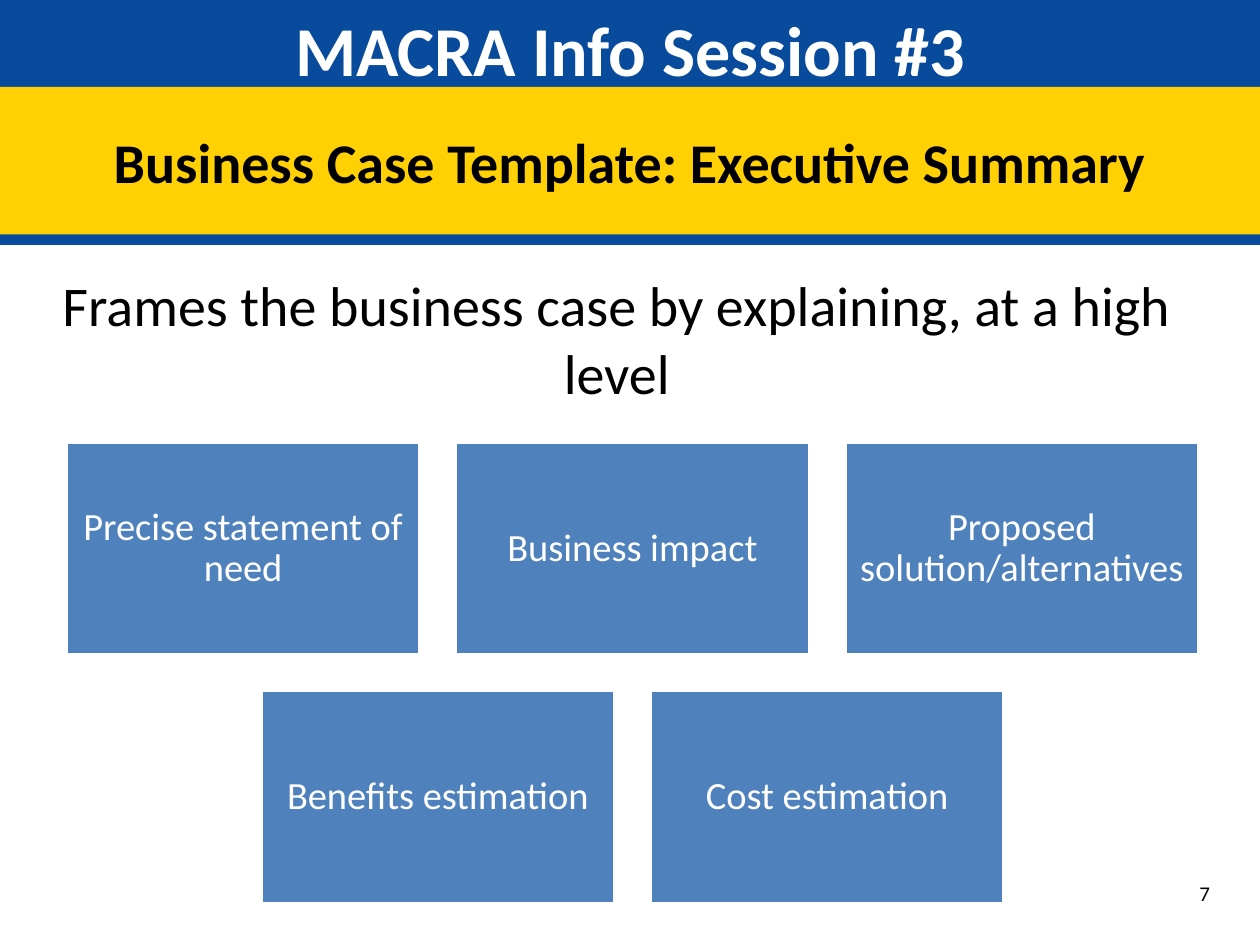
"""Build the executive summary slide with two banner bands and a centred grid of boxes."""
import pptx
import pptx.util
import pptx.dml.color
import pptx.enum.shapes
import pptx.enum.text
import pptx.oxml.ns
import lxml.etree

TITLE = "MACRA Info Session #3"
SUBTITLE = "Business Case Template: Executive Summary"
LEAD = "Frames the business case by explaining, at a high level"
ROWS = [
    ["Precise statement of need", "Business impact", "Proposed solution/alternatives"],
    ["Benefits estimation", "Cost estimation"],
]
PAGE = "7"

COLORS = {"blue": "084A9C", "yellow": "FFD004", "box": "4F81BD", "white": "FFFFFF", "black": "000000"}
WIDTH, HEIGHT = 10, 7.5
BOX_W, BOX_H, GAP = 2.81, 1.69, 0.28
GRID_CENTER, GRID_TOP = 5.02, 3.51

ANCHOR = pptx.enum.text.MSO_ANCHOR
CENTER = pptx.enum.text.PP_ALIGN.CENTER
RECT = pptx.enum.shapes.MSO_SHAPE.RECTANGLE


def rgb(name):
    return pptx.dml.color.RGBColor.from_string(COLORS[name])


def place(sp, box):
    for key, value in zip(("left", "top", "width", "height"), box):
        setattr(sp, key, pptx.util.Inches(value))


def write(sp, text, size, color, bold=False, anchor=ANCHOR.MIDDLE, align=CENTER, spacing=None):
    tf = sp.text_frame
    frame = {"word_wrap": True, "auto_size": pptx.enum.text.MSO_AUTO_SIZE.NONE, "vertical_anchor": anchor}
    for key, value in frame.items():
        setattr(tf, key, value)
    p = tf.paragraphs[0]
    p.alignment = align
    p.line_spacing = spacing
    r = p.add_run()
    r.text = text
    for key, value in {"name": "Calibri", "size": pptx.util.Pt(size), "bold": bold}.items():
        setattr(r.font, key, value)
    r.font.color.rgb = rgb(color)


def paint(sp, fill, shadow=None):
    sp.fill.solid()
    sp.fill.fore_color.rgb = rgb(fill)
    sp.line.fill.background()
    sp.shadow.inherit = False
    if shadow:
        qn = pptx.oxml.ns.qn
        effects = sp._element.spPr.find(qn("a:effectLst"))
        drop = lxml.etree.SubElement(effects, qn("a:outerShdw"), dist="76200", dir="5400000",
                                     algn="t", rotWithShape="0")
        lxml.etree.SubElement(drop, qn("a:srgbClr"), val=COLORS[shadow])


def add_rect(s, box):
    sp = s.shapes.add_shape(RECT, 0, 0, 0, 0)
    place(sp, box)
    return sp


def add_text(s, box, text, size, **formats):
    sp = s.shapes.add_textbox(0, 0, 0, 0)
    place(sp, box)
    write(sp, text, size, "black", anchor=ANCHOR.TOP, **formats)


def add_boxes(s):
    for row, labels in enumerate(ROWS):
        row_w = len(labels) * (BOX_W + GAP) - GAP
        top = GRID_TOP + row * (BOX_H + GAP)
        for col, label in enumerate(labels):
            left = GRID_CENTER - row_w / 2 + col * (BOX_W + GAP)
            sp = add_rect(s, (left, top, BOX_W, BOX_H))
            paint(sp, "box")
            sp.line.color.rgb = rgb("white")
            sp.line.width = pptx.util.Pt(2)
            for side in ("left", "top", "right", "bottom"):
                setattr(sp.text_frame, "margin_" + side, pptx.util.Inches(0.09))
            write(sp, label, 22, "white", spacing=0.9)


def main():
    prs = pptx.Presentation()
    prs.slide_width, prs.slide_height = pptx.util.Inches(WIDTH), pptx.util.Inches(HEIGHT)
    s = prs.slides.add_slide(prs.slide_layouts[5])

    title = s.shapes.title
    place(title, (0, 0, WIDTH, 1.47))
    paint(title, "blue", "yellow")
    write(title, TITLE, 40, "white", bold=True, anchor=ANCHOR.TOP)

    band = add_rect(s, (0, 0.69, WIDTH, 1.17))
    paint(band, "yellow", "blue")
    write(band, SUBTITLE, 32, "black", bold=True)

    add_boxes(s)
    add_text(s, (0.3, 2.1, 9.19, 1.18), LEAD, 32)
    add_text(s, (9.42, 6.94, 0.5, 0.3), PAGE, 12, align=pptx.enum.text.PP_ALIGN.LEFT)
    prs.save("out.pptx")


if __name__ == "__main__":
    main()
